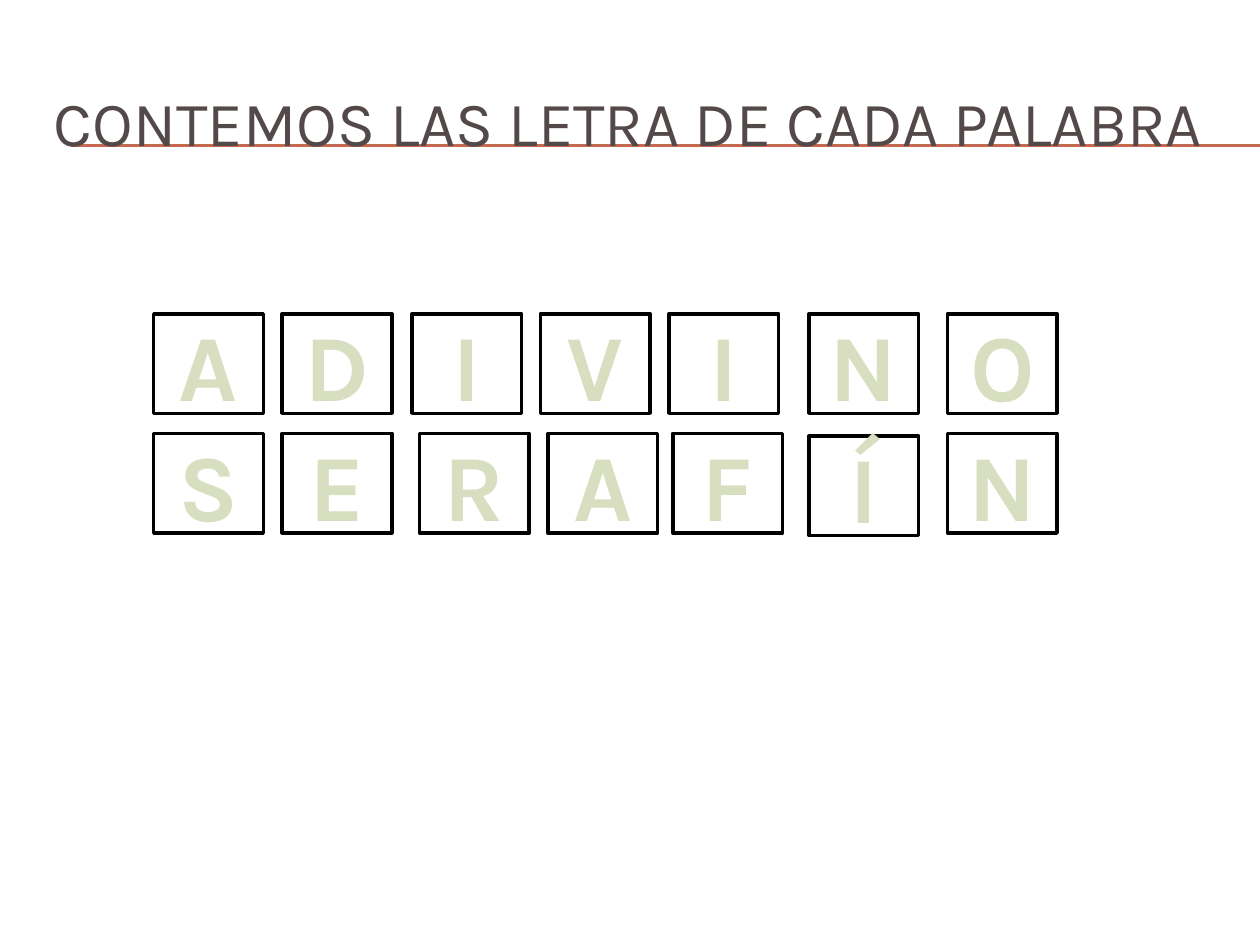
from dataclasses import dataclass

from lxml import etree
from pptx import Presentation
from pptx.dml.color import RGBColor
from pptx.enum.shapes import MSO_CONNECTOR, MSO_SHAPE
from pptx.enum.text import MSO_ANCHOR, PP_ALIGN
from pptx.oxml.ns import qn
from pptx.util import Inches, Pt

STRAIGHT = MSO_CONNECTOR.STRAIGHT
RECTANGLE = MSO_SHAPE.RECTANGLE
MIDDLE = MSO_ANCHOR.MIDDLE
CENTER = PP_ALIGN.CENTER


@dataclass(frozen=True)
class Theme:
    font: str = "Karla"
    heading: str = "534949"
    rule: str = "C66951"
    paper: str = "FFFFFF"
    border: str = "000000"
    letter: str = "D8DEC0"
    letter_edge: str = "564646"
    heading_size: int = 36
    letter_size: int = 54
    rule_width: float = 0.75
    border_width: int = 2
    edge_width: int = 1


THEME = Theme()
TILE_WIDTH, TILE_HEIGHT = 0.87, 0.79


def rgb(value):
    return RGBColor.from_string(value)


def style_text(paragraph, size, color, bold=False):
    paragraph.font.name = THEME.font
    paragraph.font.size = Pt(size)
    paragraph.font.bold = bold
    paragraph.font.color.rgb = rgb(color)


def add_rule(slide, left, right, top):
    rule = slide.shapes.add_connector(
        STRAIGHT, Inches(left), Inches(top), Inches(right), Inches(top))
    rule.line.color.rgb = rgb(THEME.rule)
    rule.line.width = Pt(THEME.rule_width)
    etree.SubElement(rule._element.spPr, qn("a:effectLst"))


def add_heading(slide, left, top, width, height, wording):
    for offset in (0.65, 0.66):
        add_rule(slide, left + 0.23, 10, top + offset)
    heading = slide.shapes.add_textbox(
        Inches(left), Inches(top), Inches(width), Inches(height))
    frame = heading.text_frame
    frame.word_wrap = True
    frame.vertical_anchor = MIDDLE
    frame.text = wording
    style_text(frame.paragraphs[0], THEME.heading_size, THEME.heading)


def outline_letter(run):
    edge = etree.Element(qn("a:ln"), w=str(Pt(THEME.edge_width)))
    fill = etree.SubElement(edge, qn("a:solidFill"))
    etree.SubElement(fill, qn("a:srgbClr"), val=THEME.letter_edge)
    run.font._element.insert(0, edge)


def add_tile(slide, left, top, letter):
    tile = slide.shapes.add_shape(
        RECTANGLE, Inches(left), Inches(top), Inches(TILE_WIDTH), Inches(TILE_HEIGHT))
    tile.shadow.inherit = False
    tile.fill.solid()
    tile.fill.fore_color.rgb = rgb(THEME.paper)
    tile.line.color.rgb = rgb(THEME.border)
    tile.line.width = Pt(THEME.border_width)
    frame = tile.text_frame
    frame.vertical_anchor = MIDDLE
    frame.text = letter
    paragraph = frame.paragraphs[0]
    paragraph.alignment = CENTER
    style_text(paragraph, THEME.letter_size, THEME.letter, bold=True)
    outline_letter(paragraph.runs[0])


def add_word(slide, left, top, word, offsets, drops):
    for position, (letter, offset) in enumerate(zip(word, offsets)):
        add_tile(slide, left + offset, top + drops.get(position, 0), letter)


def main():
    presentation = Presentation()
    presentation.slide_width = Inches(10)
    presentation.slide_height = Inches(7.5)
    slide = presentation.slides.add_slide(presentation.slide_layouts[6])
    add_heading(slide, 0.33, 0.5, 9.5, 0.92, "CONTEMOS LAS LETRA DE CADA PALABRA")
    add_word(slide, 1.22, 2.49, "ADIVINO", (0, 1.02, 2.05, 3.07, 4.09, 5.2, 6.3), {})
    add_word(slide, 1.22, 3.44, "SERAFÍN", (0, 1.02, 2.11, 3.13, 4.12, 5.2, 6.3), {5: 0.02})
    presentation.save("out.pptx")


if __name__ == "__main__":
    main()
